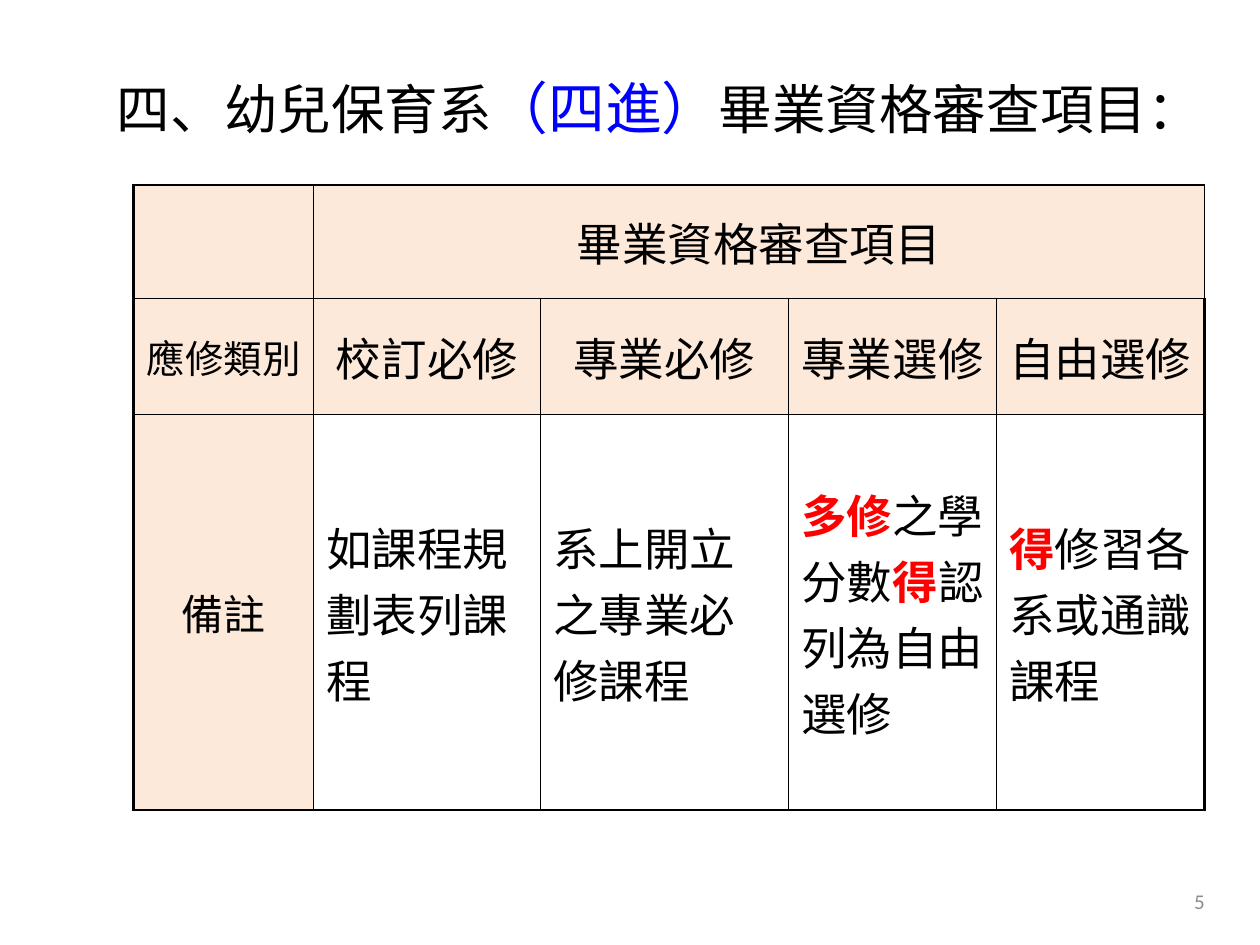
"""Build the slide listing the graduation review items of the childcare department."""
from lxml import etree
from pptx import Presentation
from pptx.dml.color import RGBColor
from pptx.enum.text import MSO_ANCHOR, PP_ALIGN
from pptx.oxml.ns import qn
from pptx.util import Inches, Pt

MIDDLE = MSO_ANCHOR.MIDDLE
LEFT, CENTER, RIGHT = PP_ALIGN.LEFT, PP_ALIGN.CENTER, PP_ALIGN.RIGHT
BLACK = RGBColor(0x00, 0x00, 0x00)
BLUE = RGBColor(0x00, 0x00, 0xFF)
RED = RGBColor(0xFF, 0x00, 0x00)
GRAY = RGBColor(0x8C, 0x8C, 0x8C)
PEACH = RGBColor(0xFD, 0xE9, 0xD9)

TITLE = [("四、幼兒保育系", BLACK, 30.6), ("（四進）", BLUE, 32.4), ("畢業資格審查項目：", BLACK, 30.6)]
PAGE_NUMBER = "5"
ROWS = [
    ["", "畢業資格審查項目", "", "", ""],
    ["應修類別", "校訂必修", "專業必修", "專業選修", "自由選修"],
    ["備註", "如課程規劃表列課程", "系上開立之專業必修課程",
     "*多修*之學分數*得*認列為自由選修", "*得*修習各系或通識課程"],
]
LABEL_SIZES = {"應修類別": 22, "備註": 24}
BODY_SIZE = 26
COLUMN_WIDTHS = [1.43, 1.8, 1.97, 1.65, 1.65]
ROW_HEIGHTS = [0.9, 0.92, 3.14]
LAST_ROW, LAST_COLUMN = len(ROW_HEIGHTS) - 1, len(COLUMN_WIDTHS) - 1


def add_run(paragraph, text, color, bold=False):
    run = paragraph.add_run()
    run.text = text
    run.font.color.rgb = color
    run.font.bold = bold
    return run


def add_text_box(slide, left, top, width, height, alignment, font_name):
    frame = slide.shapes.add_textbox(*map(Inches, (left, top, width, height))).text_frame
    frame.word_wrap = True
    frame.vertical_anchor = MIDDLE
    paragraph = frame.paragraphs[0]
    paragraph.alignment = alignment
    paragraph.font.name = font_name
    return paragraph


def set_borders(cell, row, column):
    outer = {"L": column == 0, "R": column == LAST_COLUMN, "T": row == 0, "B": row == LAST_ROW}
    properties = cell._tc.get_or_add_tcPr()
    for side, is_outer in outer.items():
        line = etree.SubElement(properties, qn(f"a:ln{side}"), w=str(Pt(1.5 if is_outer else 1)))
        fill = etree.SubElement(line, qn("a:solidFill"))
        etree.SubElement(fill, qn("a:srgbClr"), val=str(BLACK))


def fill_cell(cell, row, column, text):
    set_borders(cell, row, column)
    is_header = row < LAST_ROW or column == 0
    if is_header:
        cell.fill.solid()
        cell.fill.fore_color.rgb = PEACH
    else:
        cell.fill.background()
    cell.vertical_anchor = MIDDLE
    paragraph = cell.text_frame.paragraphs[0]
    paragraph.alignment = CENTER if is_header else LEFT
    paragraph.font.name = "Times New Roman"
    paragraph.font.size = Pt(LABEL_SIZES.get(text, BODY_SIZE))
    for index, part in enumerate(text.split("*")):
        if part:
            emphasized = index % 2 == 1
            add_run(paragraph, part, RED if emphasized else BLACK, emphasized)


def add_review_table(slide):
    table = slide.shapes.add_table(
        len(ROW_HEIGHTS), len(COLUMN_WIDTHS), Inches(1.06), Inches(1.47),
        Inches(sum(COLUMN_WIDTHS)), Inches(sum(ROW_HEIGHTS))).table
    for column, width in zip(table.columns, COLUMN_WIDTHS):
        column.width = Inches(width)
    for row, height in zip(table.rows, ROW_HEIGHTS):
        row.height = Inches(height)
    for row, texts in enumerate(ROWS):
        for column, text in enumerate(texts):
            fill_cell(table.cell(row, column), row, column, text)
    table.cell(0, 1).merge(table.cell(0, LAST_COLUMN))


def main():
    presentation = Presentation()
    presentation.slide_width, presentation.slide_height = Inches(10), Inches(7.5)
    slide = presentation.slides.add_slide(presentation.slide_layouts[6])

    number = add_text_box(slide, 7.33, 6.95, 2.33, 0.4, RIGHT, "Calibri")
    number.font.size = Pt(12)
    add_run(number, PAGE_NUMBER, GRAY)

    add_review_table(slide)

    title = add_text_box(slide, 0.83, 0.3, 8.83, 1.09, LEFT, "Noto Sans CJK JP")
    for text, color, size in TITLE:
        add_run(title, text, color).font.size = Pt(size)

    presentation.save("out.pptx")


if __name__ == "__main__":
    main()
